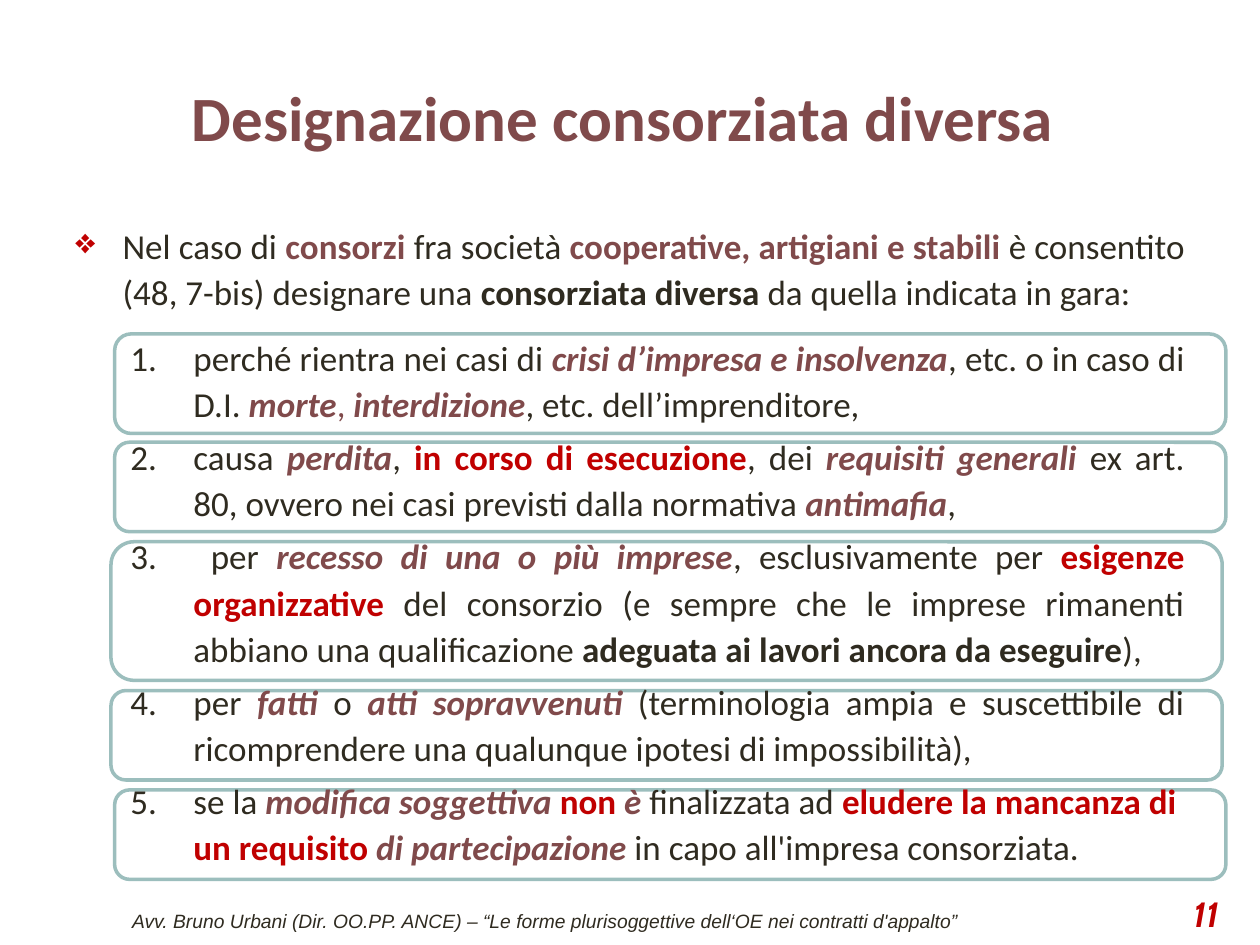
"""Builds the slide on designating a different consortium member."""
from dataclasses import dataclass

from lxml import etree
from pptx import Presentation
from pptx.dml.color import RGBColor
from pptx.enum.shapes import MSO_SHAPE
from pptx.enum.text import MSO_ANCHOR, PP_ALIGN
from pptx.oxml.ns import qn
from pptx.util import Pt

ROUND_RECT = MSO_SHAPE.ROUNDED_RECTANGLE
TOP, MIDDLE = MSO_ANCHOR.TOP, MSO_ANCHOR.MIDDLE
LEFT, CENTER, RIGHT, JUSTIFY = PP_ALIGN.LEFT, PP_ALIGN.CENTER, PP_ALIGN.RIGHT, PP_ALIGN.JUSTIFY


@dataclass(frozen=True)
class Theme:
    ink: str = "2F2B20"
    wine: str = "804A4B"
    red: str = "C00000"
    white: str = "FFFFFF"
    border: str = "9CBEBD"
    font: str = "Calibri"
    footer_font: str = "Arial"
    number_font: str = "Cabin"
    title_size: int = 36
    body_size: int = 20
    footer_size: int = 11


T = Theme()

PLAIN = (T.ink, False, False)
BOLD = (T.ink, True, False)
WINE = (T.wine, True, False)
EMPH = (T.wine, True, True)
COMMA = (T.wine, False, False)
RED = (T.red, True, False)
RED_EMPH = (T.red, True, True)


def add_text(s, box, anchor, align):
    tf = s.shapes.add_textbox(*map(Pt, box)).text_frame
    tf.word_wrap = True
    tf.vertical_anchor = anchor
    tf.paragraphs[0].alignment = align
    return tf


def add_run(p, text, style, font, size):
    color, bold, italic = style
    r = p.add_run()
    r.text = text
    r.font.name, r.font.size = font, Pt(size)
    r.font.bold, r.font.italic = bold, italic
    r.font.color.rgb = RGBColor.from_string(color)


prs = Presentation()
prs.slide_width, prs.slide_height = Pt(720), Pt(540)
s = prs.slides.add_slide(prs.slide_layouts[6])

frames = [(65.5, 190.8, 56.9), (65.5, 252.7, 51.1), (63.4, 309.6, 79.2),
          (63.4, 394.6, 51.1), (65.5, 451.4, 51.1)]
for left, top, height in frames:
    sp = s.shapes.add_shape(ROUND_RECT, Pt(left), Pt(top), Pt(635), Pt(height))
    sp.shadow.inherit = False
    sp.fill.solid()
    sp.fill.fore_color.rgb = RGBColor.from_string(T.white)
    sp.line.color.rgb = RGBColor.from_string(T.border)
    sp.line.width = Pt(2)

labels = [
    ("Designazione consorziata diversa ", (36, 21.6, 648, 90), MIDDLE, CENTER,
     WINE, T.font, T.title_size),
    ("Avv. Bruno Urbani (Dir. OO.PP. ANCE) – “Le forme plurisoggettive dell‘OE nei contratti d'appalto”",
     (36.7, 516.2, 550, 20.9), TOP, CENTER, (T.ink, False, True), T.footer_font, T.footer_size),
    ("11", (535.7, 507.6, 167.8, 28.8), MIDDLE, RIGHT, RED_EMPH, T.number_font, T.body_size),
]
for text, box, anchor, align, style, font, size in labels:
    add_run(add_text(s, box, anchor, align).paragraphs[0], text, style, font, size)

intro = [("Nel caso di ", PLAIN), ("consorzi ", WINE), ("fra società ", PLAIN),
         ("cooperative, artigiani e stabili ", WINE),
         ("è consentito (48, 7-bis) designare una ", PLAIN),
         ("consorziata diversa ", BOLD), ("da quella indicata in gara:", PLAIN)]
cases = [
    [("perché rientra nei casi di ", PLAIN), ("crisi d’impresa e insolvenza", EMPH),
     (", etc. o in caso di D.I. ", PLAIN), ("morte", EMPH), (", ", COMMA),
     ("interdizione", EMPH), (", etc. dell’imprenditore,", PLAIN)],
    [("causa ", PLAIN), ("perdita", EMPH), (", ", PLAIN), ("in corso di esecuzione", RED),
     (", dei ", PLAIN), ("requisiti generali ", EMPH),
     ("ex art. 80, ovvero nei casi previsti dalla normativa ", PLAIN),
     ("antimafia", EMPH), (",", PLAIN)],
    [(" per ", PLAIN), ("recesso di una o più imprese", EMPH), (", esclusivamente per ", PLAIN),
     ("esigenze organizzative ", RED),
     ("del consorzio (e sempre che le imprese rimanenti abbiano una qualificazione ", PLAIN),
     ("adeguata ai lavori ancora da eseguire", BOLD), ("), ", PLAIN)],
    [("per ", PLAIN), ("fatti ", EMPH), ("o ", PLAIN), ("atti sopravvenuti", EMPH),
     (" (terminologia ampia e suscettibile di ricomprendere una qualunque ipotesi di impossibilità),",
      PLAIN)],
    [("se la ", PLAIN), ("modifica soggettiva ", EMPH), ("non", RED), (" è ", EMPH),
     ("finalizzata ad ", PLAIN), ("eludere la mancanza di un requisito", RED),
     (" di partecipazione", EMPH), (" in capo all'impresa consorziata.", PLAIN)],
]

tf = add_text(s, (36, 122.4, 648, 393.1), TOP, JUSTIFY)
for i, runs in enumerate([intro] + cases):
    p = tf.add_paragraph() if i else tf.paragraphs[0]
    pPr = p._p.get_or_add_pPr()
    margin, hang = (67.5, 36) if i else (27, 27)
    pPr.set("marL", str(Pt(margin)))
    pPr.set("indent", str(-Pt(hang)))
    if i:
        etree.SubElement(pPr, qn("a:buFont"), typeface="+mj-lt")
        etree.SubElement(pPr, qn("a:buAutoNum"), type="arabicPeriod")
    else:
        etree.SubElement(etree.SubElement(pPr, qn("a:buClr")), qn("a:srgbClr"), val=T.red)
        etree.SubElement(pPr, qn("a:buChar"), char="❖")
    p.alignment = LEFT if i == len(cases) else JUSTIFY
    p.line_spacing = 1.1
    p.space_before = Pt((0, 11)[i] if i < 2 else 4)
    for text, style in runs:
        add_run(p, text, style, T.font, T.body_size)

prs.save("out.pptx")
